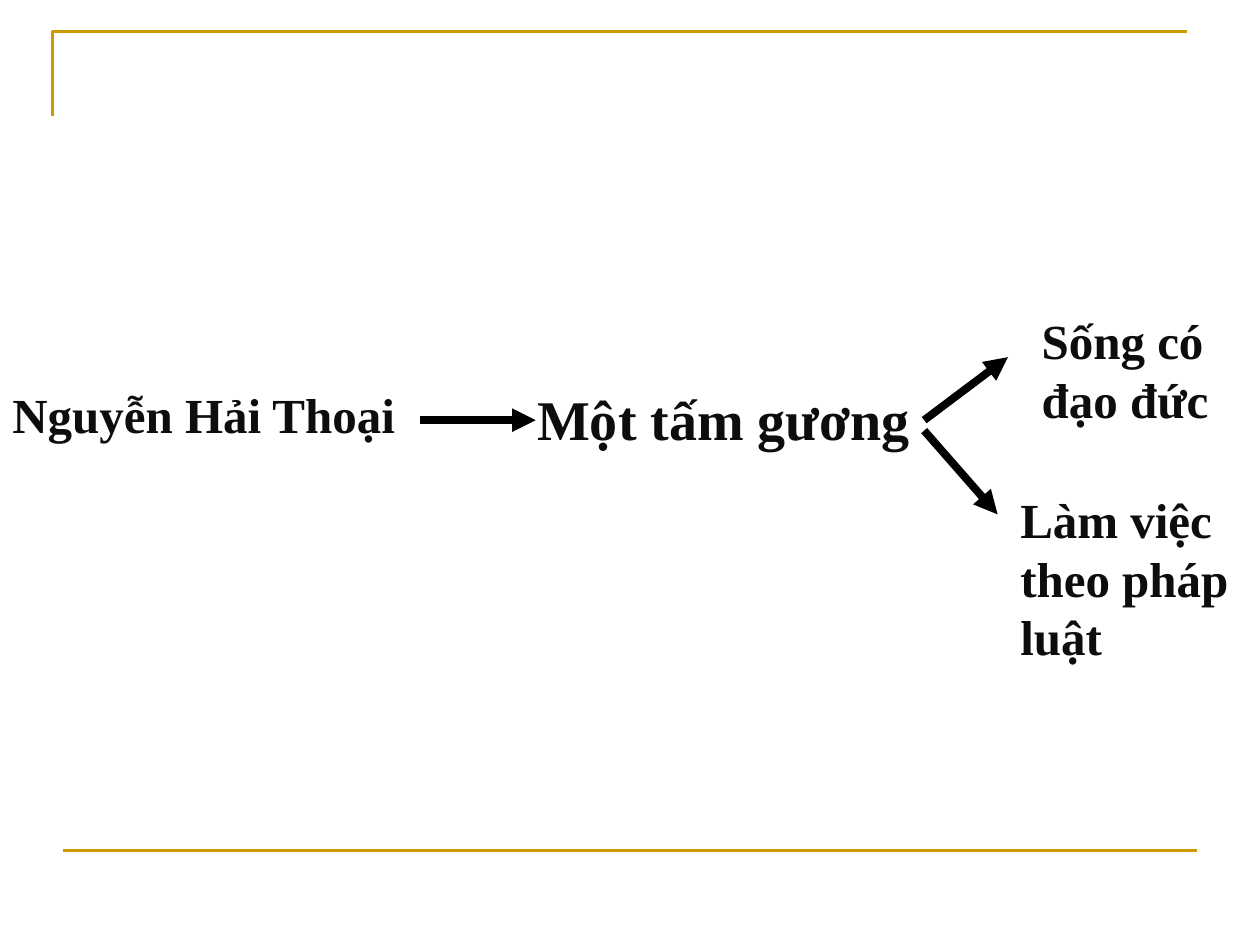
"""Build a slide that links a person to an example and its two lessons."""
from dataclasses import dataclass

from lxml.etree import SubElement
from pptx import Presentation
from pptx.dml.color import RGBColor
from pptx.enum.shapes import MSO_CONNECTOR as Connector
from pptx.enum.text import MSO_AUTO_SIZE as AutoSize
from pptx.oxml.ns import qn
from pptx.util import Cm, Pt

GOLD, BLACK, INK = "CC9900", "000000", "0D0D0D"
LABEL_FORMAT = {"name": "Times New Roman", "bold": True}


@dataclass
class Label:
    text: str
    left: float
    top: float
    width: float
    height: float
    size: int = 28


@dataclass
class Stroke:
    x1: float
    y1: float
    x2: float
    y2: float
    color: str = BLACK
    weight: float = 4.5
    arrow: bool = True


FOOTER_RULE = Stroke(1.27, 17.15, 24.13, 17.15, GOLD, 1.5, False)
ARROWS = [
    Stroke(8.47, 8.47, 10.8, 8.47),
    Stroke(18.63, 8.47, 20.32, 7.2),
    Stroke(18.63, 8.68, 20.11, 10.37),
]
LABELS = [
    Label("Nguyễn Hải Thoại", 0, 7.62, 8.89, 1.45),
    Label("Một tấm gương", 10.58, 7.62, 8.47, 1.6, 32),
    Label("Sống có đạo đức", 20.75, 6.14, 4.65, 2.65),
    Label("Làm việc theo pháp luật", 20.32, 9.74, 5.08, 3.84),
]
CORNER = [(1.06, 2.33), (1.06, 0.64), (23.92, 0.64)]


def paint(color_format, color: str) -> None:
    """Set a colour from a hex string."""
    color_format.rgb = RGBColor.from_string(color)


def style_line(line, color: str, weight: float) -> None:
    """Give a line its colour and width."""
    line.fill.solid()
    paint(line.fill.fore_color, color)
    line.width = Pt(weight)


def draw_corner(slide) -> None:
    """Draw the open gold corner at the top left."""
    start, *rest = [(Cm(x), Cm(y)) for x, y in CORNER]
    builder = slide.shapes.build_freeform(*start)
    builder.add_line_segments(rest, close=False)
    corner = builder.convert_to_shape()
    corner.shadow.inherit = False
    corner.fill.background()
    style_line(corner.line, GOLD, 1.5)


def draw_stroke(slide, stroke: Stroke) -> None:
    """Draw a straight line, with an arrowhead if it asks for one."""
    ends = [Cm(v) for v in (stroke.x1, stroke.y1, stroke.x2, stroke.y2)]
    connector = slide.shapes.add_connector(Connector.STRAIGHT, *ends)
    style_line(connector.line, stroke.color, stroke.weight)
    properties = connector.element.spPr
    if stroke.arrow:
        SubElement(properties.find(qn("a:ln")), qn("a:tailEnd"), type="triangle")
    SubElement(properties, qn("a:effectLst"))


def draw_label(slide, label: Label) -> None:
    """Write one bold label."""
    box = [Cm(v) for v in (label.left, label.top, label.width, label.height)]
    frame = slide.shapes.add_textbox(*box).text_frame
    frame.word_wrap = True
    frame.auto_size = AutoSize.SHAPE_TO_FIT_TEXT
    run = frame.paragraphs[0].add_run()
    run.text = label.text
    for attribute, value in {**LABEL_FORMAT, "size": Pt(label.size)}.items():
        setattr(run.font, attribute, value)
    paint(run.font.color, INK)


def main() -> None:
    """Assemble and save the slide."""
    deck = Presentation()
    deck.slide_width, deck.slide_height = Cm(25.4), Cm(19.05)
    slide = deck.slides.add_slide(deck.slide_layouts[6])
    draw_corner(slide)
    for stroke in [FOOTER_RULE, *ARROWS]:
        draw_stroke(slide, stroke)
    for label in LABELS:
        draw_label(slide, label)
    deck.save("out.pptx")


if __name__ == "__main__":
    main()
